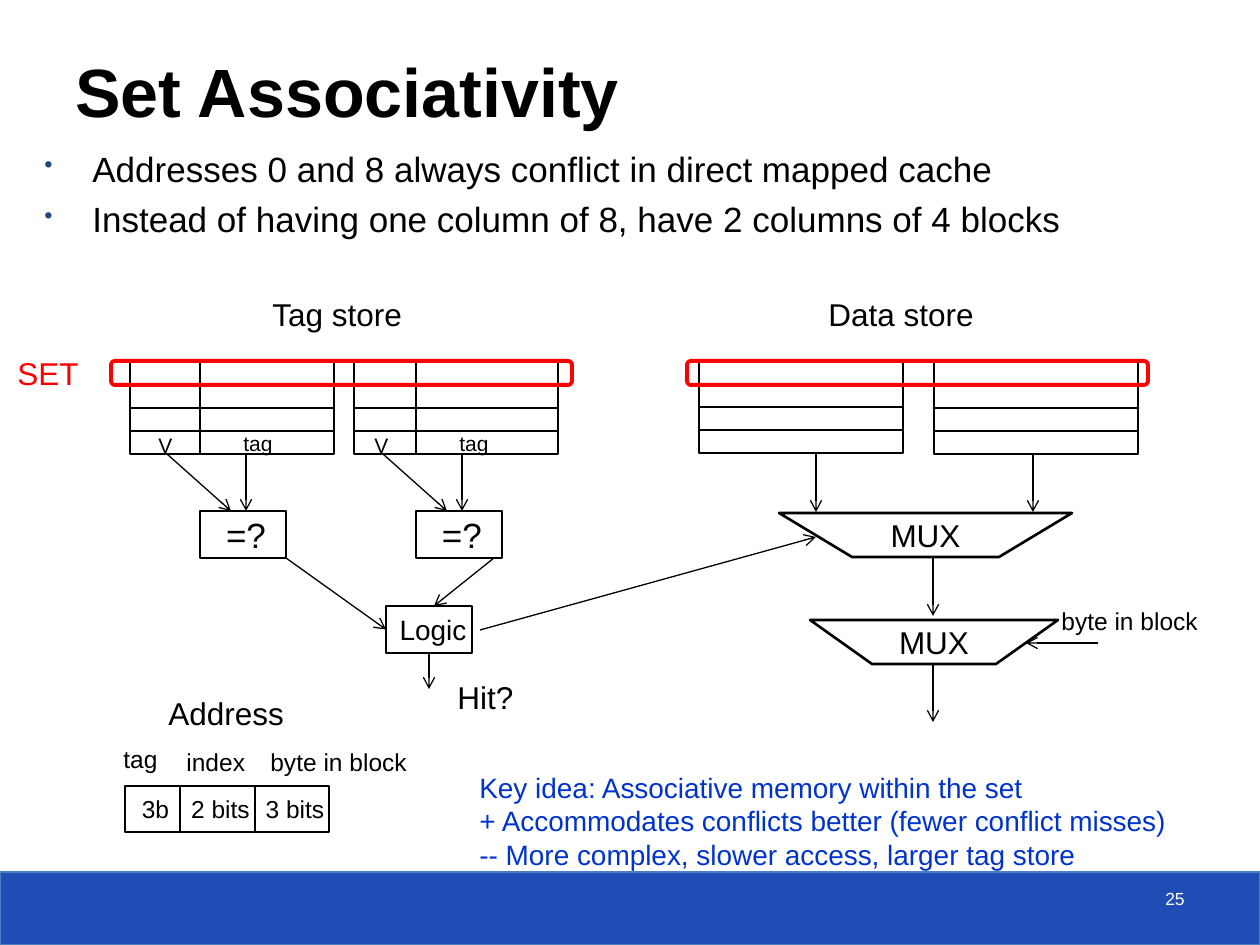
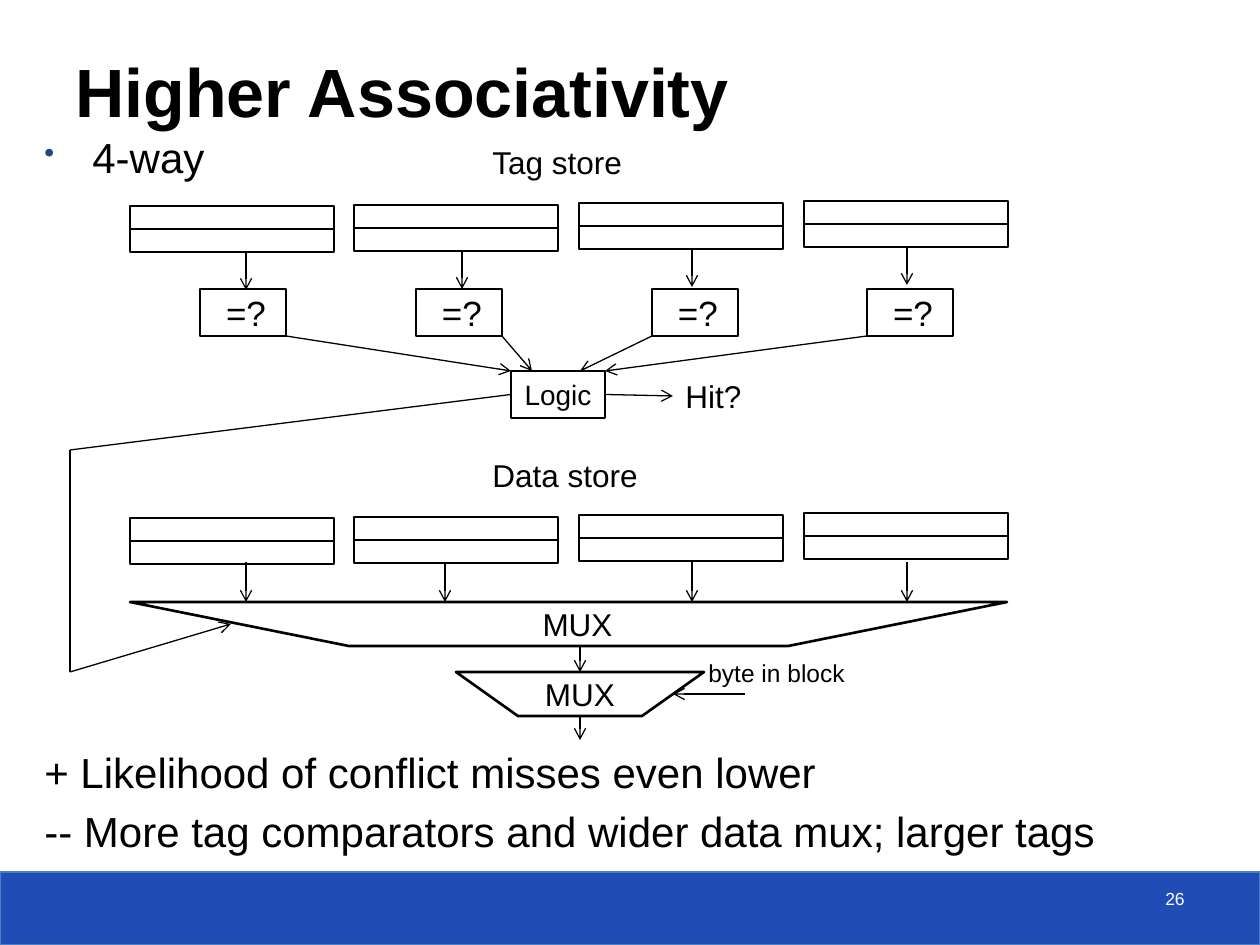
import pptx
import pptx.dml.color
import pptx.enum.shapes
import pptx.enum.text
import pptx.oxml.ns
import pptx.util
from lxml import etree

SCALE = 914400 / 126  # EMU in one px
FONT = "Arial"
BLACK, WHITE, RED = "000000", "FFFFFF", "FF0000"
BAND_FILL, BAND_LINE = "204DB5", "4B7EBC"
BULLET, KEY_IDEA = "1F497D", "0033CC"
CELL_WIDTH, CELL_HEIGHT = 204, 23
GATE_WIDTH, GATE_HEIGHT = 86, 47
MUX_HEIGHT = 44

SHAPE = pptx.enum.shapes.MSO_SHAPE
ALIGN = pptx.enum.text.PP_ALIGN
ANCHOR = pptx.enum.text.MSO_ANCHOR


def px(length):
    return pptx.util.Emu(round(length * SCALE))


def color(value):
    return pptx.dml.color.RGBColor.from_string(value)


def add_xml(parent, tag, **attributes):
    return etree.SubElement(parent, pptx.oxml.ns.qn(tag), attributes)


class Sketch:
    """Holds the deck, its style and the current slide."""

    def __init__(self):
        self.deck = pptx.Presentation()
        self.deck.slide_width, self.deck.slide_height = px(1260), px(945)
        self.page = None

    def start(self, title, number):
        self.page = self.deck.slides.add_slide(self.deck.slide_layouts[6])
        self.box(0, 872, 1260, 73, line=BAND_LINE, fill=BAND_FILL)
        heading = self.text(63, 32, 1029, 105, title, 39, bold=True)
        heading.text_frame.vertical_anchor = ANCHOR.BOTTOM
        self.text(903, 882, 294, 42, number, 10, WHITE, align=ALIGN.RIGHT)

    def set_words(self, frame, words, size, ink=BLACK, bold=False, align=ALIGN.LEFT):
        frame.text = words
        for para in frame.paragraphs:
            para.alignment = align
            for span in para.runs:
                span.font.name, span.font.size = FONT, pptx.util.Pt(size)
                span.font.bold, span.font.color.rgb = bold, color(ink)

    def text(self, left, top, width, height, words, size, ink=BLACK, **style):
        box = self.page.shapes.add_textbox(px(left), px(top), px(width), px(height))
        box.text_frame.word_wrap = True
        self.set_words(box.text_frame, words, size, ink, **style)
        return box

    def label(self, left, top, width, words, size=18, ink=BLACK):
        """A free label, as high as its single line."""
        box = self.text(left, top, width, size * 2 + 14, words, size, ink)
        box.text_frame.word_wrap = False
        box.text_frame.auto_size = pptx.enum.text.MSO_AUTO_SIZE.SHAPE_TO_FIT_TEXT

    def body(self, top, height, words, size, bullets=True):
        box = self.text(32, top, 1187, height, words, size)
        for index, para in enumerate(box.text_frame.paragraphs):
            if bullets:
                properties = para._p.get_or_add_pPr()
                properties.set("marL", str(px(48)))
                properties.set("indent", str(px(-48)))
                tint = add_xml(properties, "a:buClr")
                add_xml(tint, "a:srgbClr", val=BULLET)
                add_xml(properties, "a:buSzPct", val="70000")
                add_xml(properties, "a:buChar", char="•")
            if index:
                para.space_before = pptx.util.Pt(5)

    def finish(self, shape, line, weight, fill, words, size, nudge):
        """Outline, fill and centred caption; nudge moves the caption right."""
        shape.shadow.inherit = False
        shape.line.color.rgb, shape.line.width = color(line), pptx.util.Pt(weight)
        if fill:
            shape.fill.solid()
            shape.fill.fore_color.rgb = color(fill)
        else:
            shape.fill.background()
        if words:
            frame = shape.text_frame
            frame.word_wrap = True
            frame.margin_left, frame.margin_right = px(2 * nudge), 0
            frame.margin_top = frame.margin_bottom = 0
            frame.vertical_anchor = ANCHOR.MIDDLE
            self.set_words(frame, words, size, align=ALIGN.CENTER)
        return shape

    def box(self, left, top, width, height, words="", size=14, line=BLACK,
            weight=0.75, fill=None, nudge=0, kind=SHAPE.RECTANGLE):
        shape = self.page.shapes.add_shape(
            kind, px(left), px(top), px(width), px(height))
        return self.finish(shape, line, weight, fill, words, size, nudge)

    def comparator(self, left, top):
        self.box(left, top, GATE_WIDTH, GATE_HEIGHT, "=?", 20, nudge=3)

    def memory(self, left, top, rows):
        for row in range(rows):
            self.box(left, top + row * CELL_HEIGHT, CELL_WIDTH, CELL_HEIGHT)

    def set_frame(self, left):
        frame = self.box(left, 361, 461, 24, line=RED, weight=2.25,
                         kind=SHAPE.ROUNDED_RECTANGLE)
        frame.adjustments[0] = 0.167

    def mux(self, left, top, width, nudge=0):
        right, bottom, slant = left + width, top + MUX_HEIGHT, width / 4
        outline = self.page.shapes.build_freeform(right, top, SCALE)
        outline.add_line_segments(
            [(right - slant, bottom), (left + slant, bottom), (left, top)], close=True)
        self.finish(outline.convert_to_shape(), BLACK, 1.5, None, "MUX", 18, nudge)

    def line(self, x1, y1, x2, y2, arrow=True, begin=None, end=None):
        """begin and end are (shape, side) pairs to join."""
        link = self.page.shapes.add_connector(
            pptx.enum.shapes.MSO_CONNECTOR.STRAIGHT, px(x1), px(y1), px(x2), px(y2))
        link.line.color.rgb, link.line.width = color(BLACK), pptx.util.Pt(0.75)
        properties = link._element.spPr
        if arrow:
            add_xml(properties.find(pptx.oxml.ns.qn("a:ln")), "a:tailEnd", type="arrow")
        add_xml(properties, "a:effectLst")
        if begin:
            link.begin_connect(*begin)
        if end:
            link.end_connect(*end)


def set_associativity(sketch):
    sketch.start("Set Associativity", "25")
    sketch.body(141, 130, "Addresses 0 and 8 always conflict in direct mapped cache\n"
                "Instead of having one column of 8, have 2 columns of 4 blocks", 20)

    # Tag store: two ways with valid bit, tag and comparator
    sketch.label(260, 289, 156, "Tag store")
    for way, left in enumerate((130, 354)):
        shift = way * 216
        sketch.memory(left, 362, 4)
        sketch.line(200 + shift, 361, 200 + shift, 454, arrow=False)
        sketch.label(146 + shift, 426, 39, "V", 12)
        sketch.label(231 + shift, 424, 55, "tag", 12)
        sketch.comparator(200 + shift, 511)
        sketch.line(246 + shift, 454, 246 + shift, 511)
        sketch.line(167 + shift, 454, 231 + shift, 511)

    # Data store
    sketch.label(816, 289, 171, "Data store")
    for left, top, out in ((699, 361, 816), (934, 362, 1033)):
        sketch.memory(left, top, 4)
        sketch.line(out, 454, out, 512)

    # The set across both stores
    sketch.label(5, 348, 87, "SET", ink=RED)
    for left in (111, 687):
        sketch.set_frame(left)

    # Hit logic
    logic = sketch.box(386, 606, GATE_WIDTH, GATE_HEIGHT, "Logic", 16, nudge=4)
    sketch.line(286, 558, 386, 630, end=(logic, 1))
    sketch.line(494, 558, 434, 606)
    sketch.line(429, 653, 429, 689, begin=(logic, 2))
    sketch.line(480, 630, 816, 537)
    sketch.label(445, 672, 82, "Hit?")

    # Selection of block and byte
    sketch.mux(779, 513, 293)
    sketch.line(933, 558, 933, 616)
    sketch.mux(810, 620, 248)
    sketch.line(933, 664, 933, 722)
    sketch.line(1098, 643, 1026, 643)
    sketch.label(1049, 600, 163, "byte in block", 14)

    # Address fields
    sketch.label(156, 688, 142, "Address")
    for left, top, width, name in ((111, 738, 59, "tag"), (174, 741, 84, "index"),
                                   (258, 741, 163, "byte in block")):
        sketch.label(left, top, width, name, 14)
    for left, right, bits in ((125, 180, "3b"), (180, 255, "2 bits"),
                              (255, 329, "3 bits")):
        sketch.box(left, 786, right - left, 46, bits, nudge=3)

    sketch.text(467, 764, 740, 110, "Key idea: Associative memory within the set\n"
                "+ Accommodates conflicts better (fewer conflict misses)\n"
                "-- More complex, slower access, larger tag store", 16, KEY_IDEA)


def higher_associativity(sketch):
    sketch.start("Higher Associativity", "26")
    sketch.body(125, 60, "4-way", 24)
    sketch.body(740, 126, "+ Likelihood of conflict misses even lower\n"
                "-- More tag comparators and wider data mux; larger tags", 24,
                bullets=False)

    # Four ways: left and top of the tags, comparator, arrows, link into the logic
    sketch.label(480, 137, 156, "Tag store")
    sketch.label(480, 450, 171, "Data store")
    ways = (
        (130, 206, 200, 246, 246, 286, 511),
        (354, 205, 416, 462, 445, 502, 532),
        (579, 203, 652, 692, 692, 652, 580),
        (804, 201, 867, 907, 907, 867, 605),
    )
    for left, top, gate, tag_out, data_out, gate_corner, logic_in in ways:
        sketch.memory(left, top, 2)
        sketch.memory(left, top + 312, 2)
        sketch.comparator(gate, 289)
        sketch.line(tag_out, top + 47, tag_out, top + 84)
        sketch.line(data_out, 562, data_out, 602)
        sketch.line(gate_corner, 336, logic_in, 371)

    # Hit logic and its way round to the block selection
    logic = sketch.box(511, 371, 94, GATE_HEIGHT, "Logic", 16)
    sketch.line(605, 394, 673, 396, begin=(logic, 3))
    sketch.label(673, 371, 82, "Hit?")
    sketch.line(511, 394, 70, 450, arrow=False, begin=(logic, 1))
    sketch.line(70, 450, 70, 672, arrow=False)
    sketch.line(70, 672, 231, 624)

    # Selection of block and byte
    sketch.mux(130, 602, 877, nudge=9)
    sketch.line(580, 646, 580, 672)
    sketch.mux(456, 672, 248)
    sketch.line(580, 716, 580, 740)
    sketch.line(745, 694, 673, 694)
    sketch.label(696, 652, 163, "byte in block", 14)


def main():
    sketch = Sketch()
    set_associativity(sketch)
    higher_associativity(sketch)
    sketch.deck.save("out.pptx")


if __name__ == "__main__":
    main()
